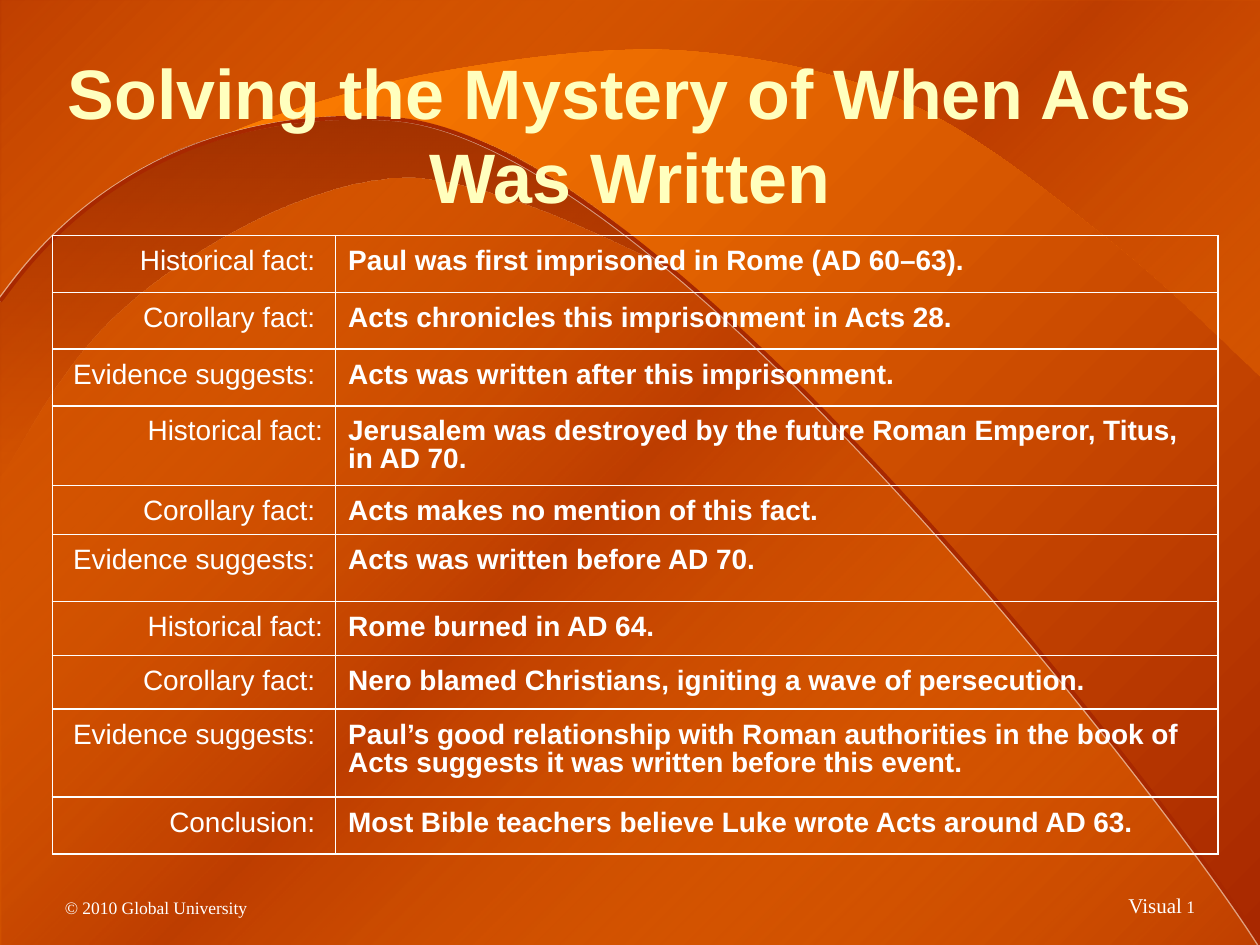
import pptx
import pptx.dml.color
import pptx.enum.shapes
import pptx.enum.text
import pptx.oxml
import pptx.oxml.ns
import pptx.util
from dataclasses import dataclass
from lxml import etree

Pt = pptx.util.Pt
qn = pptx.oxml.ns.qn
ALIGN = pptx.enum.text.PP_ALIGN
ANCHOR = pptx.enum.text.MSO_ANCHOR


@dataclass(frozen=True)
class Theme:
    orange: str = "FF7F00"
    rust: str = "A82800"
    shade: str = "8A2100"
    cream: str = "FFFFBE"
    white: str = "FFFFFF"
    sans: str = "Arial"
    serif: str = "Times New Roman"
    title: int = 40
    body: int = 16
    label: int = 12
    small: int = 10


THEME = Theme()

# Each curve: a start point, then Bezier triples (control, control, end)
SWEEP = [(720.5, 216),
         (720.5, 216), (720.5, 501), (720.5, 540), (692, 493), (593, 370), (544, 314),
         (495, 257), (490, 253), (462, 226), (435, 199), (416, 181), (379, 150),
         (341, 119), (272, 72), (229, 68), (186, 64), (135, 77), (128, 78),
         (131, 74), (202, 50), (246, 42), (290, 34), (347, 26), (390, 29),
         (433, 32), (484, 42), (519, 59), (560, 77), (603, 113), (636, 139),
         (670, 166), (703, 200), (720.5, 216)]
CRESCENT = [(382, 153),
            (358, 142), (274, 97), (222, 102), (168, 107), (100, 147), (64, 182),
            (29, 217), (14, 253), (0.5, 272), (0.5, 221), (0.5, 171), (0.5, 171),
            (19, 141), (63, 102), (104, 85), (146, 69), (194, 60), (251, 73),
            (308, 86), (369, 142), (382, 153)]
RIDGE = [(0, 172), (6, 167), (68, 58), (224, 68), (379, 78), (673, 464), (720.5, 540)]

# Each table: row height, label, statement
TABLES = [
    [(32.4, "Historical fact: ", "Paul was first imprisoned in Rome (AD 60–63)."),
     (32.4, "Corollary fact: ", "Acts chronicles this imprisonment in Acts 28."),
     (32.4, "Evidence suggests: ", "Acts was written after this imprisonment.")],
    [(45.5, "Historical fact:",
      "Jerusalem was destroyed by the future Roman Emperor, Titus, in AD 70."),
     (28, "Corollary fact: ", "Acts makes no mention of this fact."),
     (38.3, "Evidence suggests: ", "Acts was written before AD 70.")],
    [(30.8, "Historical fact:", "Rome burned in AD 64."),
     (30.8, "Corollary fact: ", "Nero blamed Christians, igniting a wave of persecution."),
     (50.2, "Evidence suggests: ",
      "Paul’s good relationship with Roman authorities in the book of Acts "
      "suggests it was written before this event.")],
    [(32.4, "Conclusion: ", "Most Bible teachers believe Luke wrote Acts around AD 63.")],
]


def rgb(value):
    return pptx.dml.color.RGBColor.from_string(value)


def add_color(parent, color, opacity):
    node = etree.SubElement(parent, qn("a:srgbClr"), val=color)
    if opacity < 100:
        etree.SubElement(node, qn("a:alpha"), val=str(opacity * 1000))


def paint_gradient(element, fill, stops, angle):
    """Fill with (position, colour, opacity) stops, angle clockwise."""
    fill.gradient()
    gradient = next(element.iter(qn("a:gradFill")))
    for child in list(gradient):
        gradient.remove(child)
    stop_list = etree.SubElement(gradient, qn("a:gsLst"))
    for position, color, opacity in stops:
        stop = etree.SubElement(stop_list, qn("a:gs"), pos=str(position * 1000))
        add_color(stop, color, opacity)
    etree.SubElement(gradient, qn("a:lin"), ang=str(angle * 60000), scaled="0")


def add_curve(page, points, closed):
    """Build an outline, then join every three segments into one cubic curve."""
    start, *rest = [(Pt(x), Pt(y)) for x, y in points]
    builder = page.shapes.build_freeform(*start)
    builder.add_line_segments(rest, close=closed)
    shape = builder.convert_to_shape()
    shape.shadow.inherit = False
    segments = list(shape._element.iter(qn("a:lnTo")))
    for i in range(0, len(segments), 3):
        curve = etree.Element(qn("a:cubicBezTo"))
        segments[i].addprevious(curve)
        for segment in segments[i:i + 3]:
            curve.append(segment[0])
            segment.getparent().remove(segment)
    return shape


def add_span(para, text, size, font, color, bold=False):
    span = para.add_run()
    span.text = text
    span.font.size = Pt(size)
    span.font.name = font
    span.font.bold = bold
    span.font.color.rgb = rgb(color)


def add_text(page, box, align, anchor, spans):
    frame = page.shapes.add_textbox(*map(Pt, box)).text_frame
    frame.word_wrap = True
    frame.vertical_anchor = anchor
    para = frame.paragraphs[0]
    para.alignment = align
    for span in spans:
        add_span(para, *span)


def draw_backdrop(page, box):
    paint_gradient(page.background._cSld, page.background.fill,
                   [(0, THEME.rust, 100), (50, THEME.orange, 100), (100, THEME.rust, 100)], 45)
    # Translucent veil
    veil = page.shapes.add_shape(pptx.enum.shapes.MSO_SHAPE.RECTANGLE, *map(Pt, box))
    veil.shadow.inherit = False
    paint_gradient(veil._element, veil.fill,
                   [(0, THEME.orange, 27), (50, THEME.rust, 75), (100, THEME.orange, 27)], 45)
    veil.line.fill.background()
    # Bright sweep and dark crescent
    for points, stops, angle in (
            (SWEEP, [(0, THEME.orange, 100), (100, THEME.rust, 100)], 45),
            (CRESCENT, [(0, THEME.shade, 67), (100, THEME.rust, 0)], 90)):
        shape = add_curve(page, points, True)
        paint_gradient(shape._element, shape.fill, stops, angle)
        shape.line.fill.background()
    # Ridge line with a pale edge
    ridge = add_curve(page, RIDGE, False)
    ridge.fill.background()
    ridge.line.color.rgb = rgb(THEME.rust)
    ridge.line.width = Pt(2.25)
    effects = next(ridge._element.iter(qn("a:effectLst")))
    edge = etree.SubElement(effects, qn("a:outerShdw"), blurRad="0", dist=str(Pt(1)),
                            dir=str(180 * 60000), algn="ctr", rotWithShape="0")
    add_color(edge, THEME.white, 50)


def border_cell(cell):
    properties = cell._tc.get_or_add_tcPr()
    for index, side in enumerate(("a:lnL", "a:lnR", "a:lnT", "a:lnB")):
        border = etree.Element(qn(side), w=str(Pt(1)))
        add_color(etree.SubElement(border, qn("a:solidFill")), THEME.white, 100)
        properties.insert(index, border)


def draw_table(page, box, rows):
    table = page.shapes.add_table(len(rows), 2, *map(Pt, box)).table
    table.first_row = table.horz_banding = False
    label_width = 161.8
    for column, width in zip(table.columns, (label_width, box[2] - label_width)):
        column.width = Pt(width)
    for row, (height, *texts) in zip(table.rows, rows):
        row.height = Pt(height)
        for cell, text, align, bold in zip(row.cells, texts, (ALIGN.RIGHT, ALIGN.LEFT),
                                           (False, True)):
            cell.fill.background()
            border_cell(cell)
            cell.margin_top = Pt(7.2)
            para = cell.text_frame.paragraphs[0]
            para.alignment = align
            para.line_spacing = 0.9
            add_span(para, text, THEME.body, THEME.sans, THEME.white, bold)


def draw_facts(page, left, top, width):
    for rows in TABLES:
        height = sum(row[0] for row in rows)
        draw_table(page, (left, top, width, height), rows)
        top += height


def draw_title(page, box):
    add_text(page, box, ALIGN.CENTER, ANCHOR.TOP,
             [("Solving the Mystery of When Acts Was Written",
               THEME.title, THEME.sans, THEME.cream, True)])


def draw_footer(page, left, top, width):
    add_text(page, (left, top, 216, 36), ALIGN.LEFT, ANCHOR.BOTTOM,
             [("© 2010 Global University", THEME.small, THEME.serif, THEME.white)])
    add_text(page, (left + width - 180, top, 180, 36), ALIGN.RIGHT, ANCHOR.BOTTOM,
             [("Visual", THEME.label, THEME.serif, THEME.white),
              (" 1", THEME.small, THEME.serif, THEME.white)])


def main():
    deck = pptx.Presentation()
    deck.slide_width, deck.slide_height = Pt(720), Pt(540)
    page = deck.slides.add_slide(deck.slide_layouts[6])
    draw_backdrop(page, (0.5, 0, 720, 540))
    draw_footer(page, 30, 492, 660)
    draw_title(page, (30, 25, 660, 90))
    draw_facts(page, 30, 134.7, 666)
    deck.save("out.pptx")


if __name__ == "__main__":
    main()
